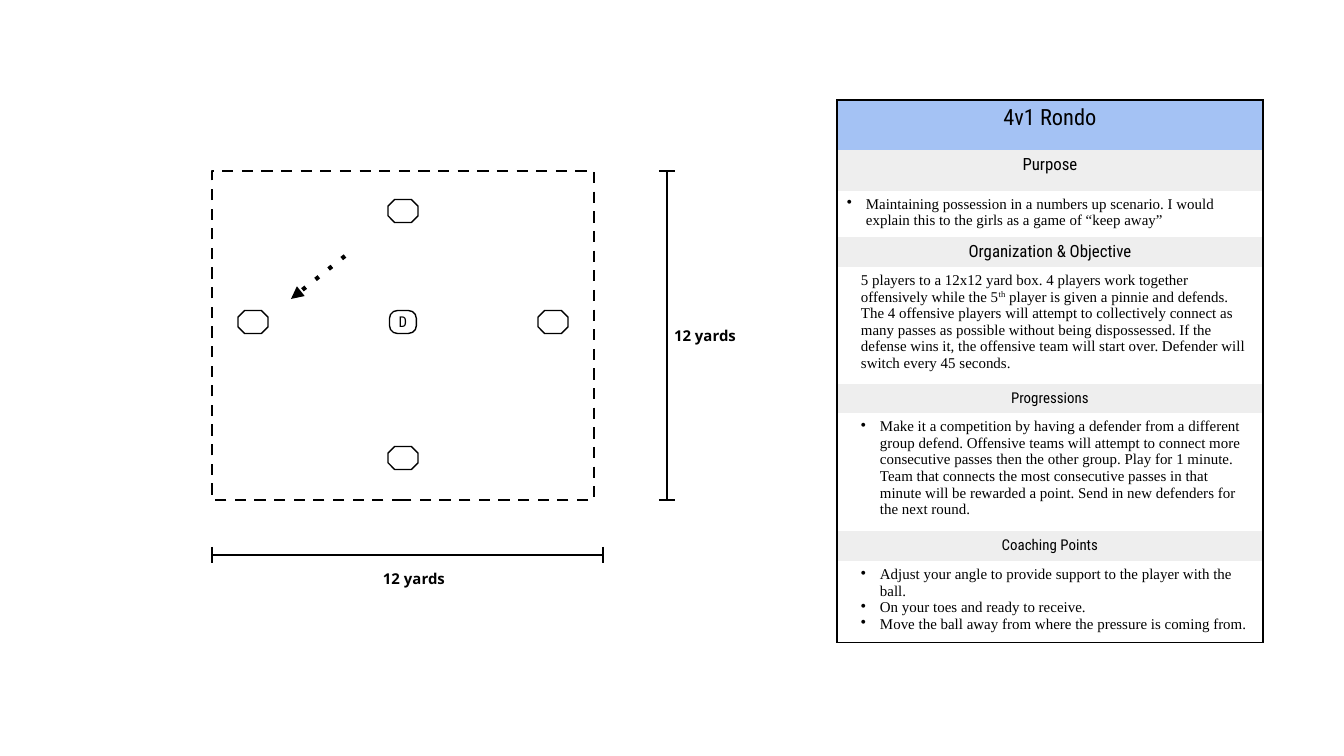
from lxml import etree
from pptx import Presentation
from pptx.dml.color import RGBColor
from pptx.enum.dml import MSO_LINE
from pptx.enum.shapes import MSO_CONNECTOR, MSO_SHAPE
from pptx.enum.text import MSO_ANCHOR, PP_ALIGN
from pptx.oxml.ns import qn
from pptx.util import Emu, Pt

STRAIGHT = MSO_CONNECTOR.STRAIGHT
RECTANGLE, OCTAGON, ROUNDED = MSO_SHAPE.RECTANGLE, MSO_SHAPE.OCTAGON, MSO_SHAPE.ROUNDED_RECTANGLE
DASH = MSO_LINE.DASH
LEFT, CENTER = PP_ALIGN.LEFT, PP_ALIGN.CENTER
MIDDLE = MSO_ANCHOR.MIDDLE

THEME = {
    "ink": "000000", "paper": "FFFFFF", "title": "A4C2F4", "heading": "EEEEEE",
    "thin": 0.75, "box": 1.5, "arrow": 2.25,
    "heading_font": "Roboto Condensed", "body_font": "Times New Roman", "label_font": "Open Sans",
    "title_size": 12, "heading_size": 9, "body_size": 8,
}

PLAN = [
    ("title", 50, 12, ["4v1 Rondo"]),
    ("heading", 41, 9, ["Purpose"]),
    ("outer bullet", 46, 8, [
        "Maintaining possession in a numbers up scenario. I would explain this to the girls "
        "as a game of “keep away”"]),
    ("heading", 30, 9, ["Organization & Objective"]),
    ("text", 117, 8, [(
        "5 players to a 12x12 yard box. 4 players work together offensively while the 5", "th",
        " player is given a pinnie and defends. The 4 offensive players will attempt to "
        "collectively connect as many passes as possible without being dispossessed. If the "
        "defense wins it, the offensive team will start over. Defender will switch every "
        "45 seconds.")]),
    ("heading", 29, 8, ["Progressions"]),
    ("bullet", 118, 8, [
        "Make it a competition by having a defender from a different group defend. Offensive "
        "teams will attempt to connect more consecutive passes then the other group. Play for "
        "1 minute. Team that connects the most consecutive passes in that minute will be "
        "rewarded a point. Send in new defenders for the next round."]),
    ("heading", 30, 8, ["Coaching Points"]),
    ("bullet", 81, 8, [
        "Adjust your angle to provide support to the player with the ball.",
        "On your toes and ready to receive.",
        "Move the ball away from where the pressure is coming from."]),
]
INDENTS = {"outer bullet": (19, -19), "text": (14, 0), "bullet": (33, -19)}
TABLE_LEFT, TABLE_TOP, TABLE_WIDTH = 837, 100, 426

FIELD = (212, 171, 382, 329)
PLAYERS = [(403, 211), (253, 322), (553, 322), (403, 458)]
DEFENDER = (403, 322)
PASS_LINE = (345, 256, 291, 299)
RULERS = [(667, 171, 667, 500), (212, 555, 603, 555)]
CAP = 8
LABELS = [(674, 327), (383, 570)]


def px(value):
    return Emu(round(value * 914400 / 134.4))


def color(name):
    return RGBColor.from_string(THEME[name])


def write(paragraph, parts, size, font, bold=False, align=LEFT):
    paragraph.alignment = align
    for part in parts:
        run = paragraph.add_run()
        run.text = part
        formats = {"size": Pt(size), "name": THEME[font], "bold": bold}
        for attribute, value in formats.items():
            setattr(run.font, attribute, value)
        run.font.color.rgb = color("ink")
        if part == "th":
            run._r.get_or_add_rPr().set("baseline", "30000")


def clear_margins(frame):
    for side in ("left", "top", "right", "bottom"):
        setattr(frame, f"margin_{side}", 0)


def add_line(slide, ends, weight="thin"):
    line = slide.shapes.add_connector(STRAIGHT, *map(px, ends))
    line.line.color.rgb = color("ink")
    line.line.width = Pt(THEME[weight])
    etree.SubElement(line._element.spPr, qn("a:effectLst"))
    return line


def add_outline(slide, kind, box, weight="thin"):
    shape = slide.shapes.add_shape(kind, *map(px, box))
    shape.shadow.inherit = False
    shape.fill.solid()
    shape.fill.fore_color.rgb = color("paper")
    shape.line.color.rgb = color("ink")
    shape.line.width = Pt(THEME[weight])
    return shape


def add_marker(slide, kind, center, size, adjustment):
    (x, y), (width, height) = center, size
    shape = add_outline(slide, kind, (x - width / 2, y - height / 2, width, height))
    shape.adjustments[0] = adjustment
    return shape


def add_ruler(slide, ends):
    x1, y1, x2, y2 = ends
    dx, dy = (CAP, 0) if x1 == x2 else (0, CAP)
    add_line(slide, ends)
    for x, y in ((x1, y1), (x2, y2)):
        add_line(slide, (x - dx, y - dy, x + dx, y + dy))


def add_label(slide, left, top):
    frame = slide.shapes.add_textbox(px(left), px(top), px(70), px(17)).text_frame
    clear_margins(frame)
    frame.word_wrap = True
    write(frame.paragraphs[0], ["12 yards"], THEME["body_size"], "label_font", bold=True)


def set_borders(cell, visible):
    properties = cell._tc.get_or_add_tcPr()
    for side in "LRTB":
        border = etree.SubElement(properties, qn(f"a:ln{side}"), w=str(Pt(THEME["thin"])))
        if side in visible:
            fill = etree.SubElement(border, qn("a:solidFill"))
            etree.SubElement(fill, qn("a:srgbClr"), val=THEME["ink"])
        else:
            etree.SubElement(border, qn("a:noFill"))


def set_indent(paragraph, kind):
    margin, indent = INDENTS[kind]
    properties = paragraph._p.get_or_add_pPr()
    properties.set("marL", str(px(margin)))
    properties.set("indent", str(px(indent)))
    if "bullet" in kind:
        etree.SubElement(properties, qn("a:buChar"), char="•")


def add_plan(slide):
    height = sum(row[1] for row in PLAN)
    box = (TABLE_LEFT, TABLE_TOP, TABLE_WIDTH, height)
    table = slide.shapes.add_table(len(PLAN), 1, *map(px, box)).table
    table.first_row = table.horz_banding = False
    for index, (kind, row_height, size, paragraphs) in enumerate(PLAN):
        table.rows[index].height = px(row_height)
        cell = table.cell(index, 0)
        margins = {"margin_left": 10, "margin_right": 10, "margin_top": 5, "margin_bottom": 5}
        for attribute, value in margins.items():
            setattr(cell, attribute, px(value))
        set_borders(cell, "LR" + "T" * (index == 0) + "B" * (index == len(PLAN) - 1))
        cell.fill.solid()
        cell.fill.fore_color.rgb = color(kind if kind in THEME else "paper")
        frame = cell.text_frame
        for number, content in enumerate(paragraphs):
            paragraph = frame.add_paragraph() if number else frame.paragraphs[0]
            parts = [content] if isinstance(content, str) else content
            if kind in INDENTS:
                set_indent(paragraph, kind)
                write(paragraph, parts, size, "body_font")
            else:
                write(paragraph, parts, size, "heading_font", align=CENTER)


def main():
    presentation = Presentation()
    presentation.slide_width, presentation.slide_height = px(1344), px(756)
    slide = presentation.slides.add_slide(presentation.slide_layouts[6])

    field = add_outline(slide, RECTANGLE, FIELD, "box")
    field.line.dash_style = DASH
    for ends in RULERS:
        add_ruler(slide, ends)
    for left, top in LABELS:
        add_label(slide, left, top)
    add_plan(slide)

    for center in PLAYERS:
        add_marker(slide, OCTAGON, center, (30, 23), 0.29)
    defender = add_marker(slide, ROUNDED, DEFENDER, (27, 23), 0.35)
    clear_margins(defender.text_frame)
    defender.text_frame.vertical_anchor = MIDDLE
    write(defender.text_frame.paragraphs[0], ["D"], THEME["body_size"], "heading_font", align=CENTER)

    arrow = add_line(slide, PASS_LINE, "arrow")
    outline = arrow.line._get_or_add_ln()
    etree.SubElement(outline, qn("a:prstDash"), val="dot")
    etree.SubElement(outline, qn("a:tailEnd"), type="triangle")
    presentation.save("out.pptx")


if __name__ == "__main__":
    main()
